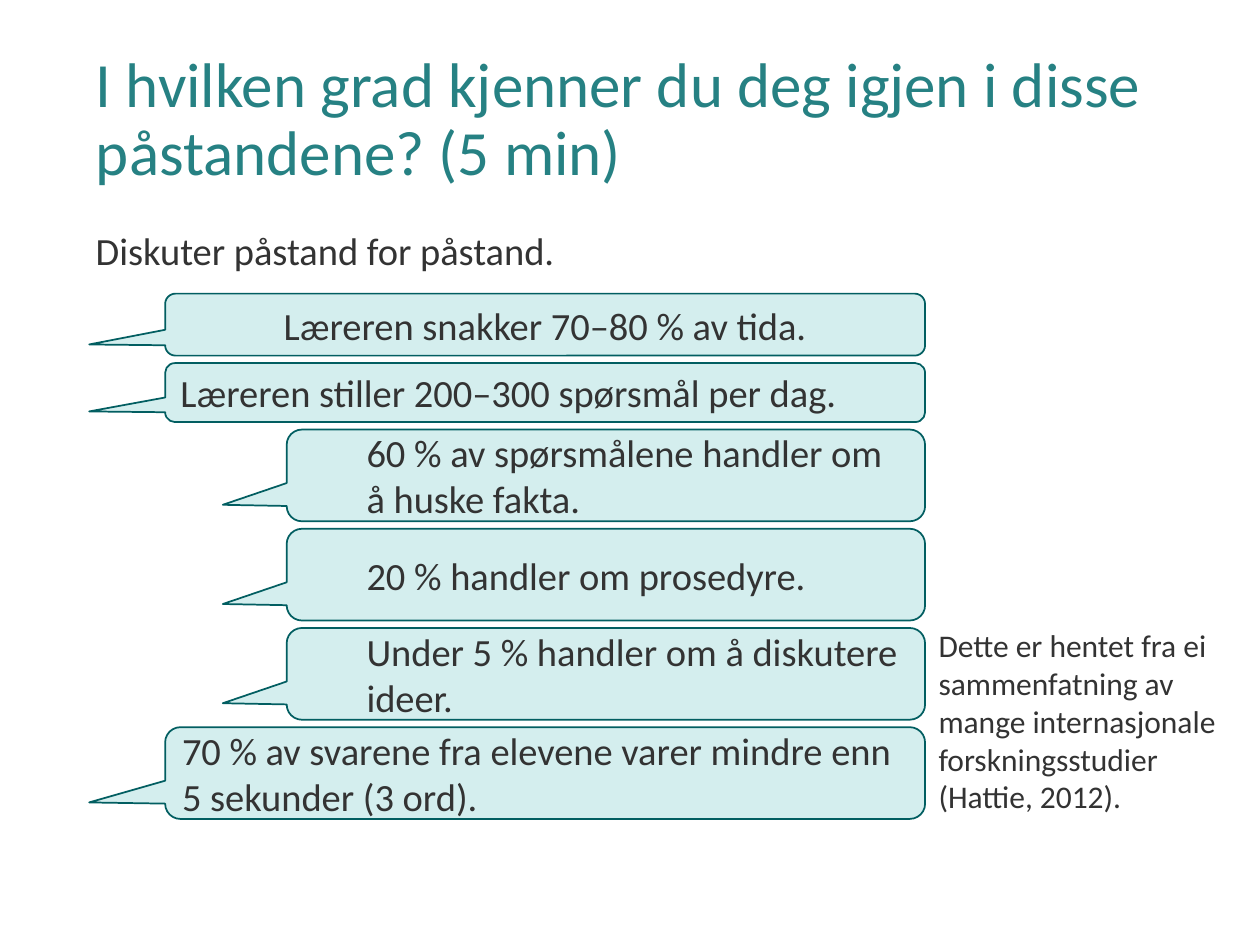
from dataclasses import dataclass

from pptx import Presentation
from pptx.dml.color import RGBColor
from pptx.enum.shapes import MSO_SHAPE as Shape
from pptx.enum.text import MSO_ANCHOR as Anchor, MSO_AUTO_SIZE as AutoSize, PP_ALIGN as Align
from pptx.util import Cm, Pt

COLORS = {"title": "268183", "text": "333333", "fill": "D4EEEE", "line": "025E61"}
FONT = "Calibri"
WIDE_LEFT, NARROW_LEFT, RIGHT = 3.33, 5.78, 18.65
FIRST_TOP, GAP = 5.92, 0.15


@dataclass
class Claim:
    text: str
    height: float = 1.85
    level: int = 0
    align: Align = Align.LEFT


CLAIMS = [
    Claim("Læreren snakker 70–80 % av tida.", 1.25, align=Align.CENTER),
    Claim("Læreren stiller 200–300 spørsmål per dag.", 1.19),
    Claim("60 % av spørsmålene handler om å huske fakta.", level=1),
    Claim("20 % handler om prosedyre.", level=1),
    Claim("Under 5 % handler om å diskutere ideer.", level=1),
    Claim("70 % av svarene fra elevene varer mindre enn 5 sekunder (3 ord)."),
]


def color(name: str) -> RGBColor:
    return RGBColor.from_string(COLORS[name])


def write(box, text: str, size: float, tone: str = "text", align: Align = Align.LEFT):
    para = box.text_frame.paragraphs[0]
    para.alignment = align
    span = para.add_run()
    span.text = text
    span.font.name = FONT
    span.font.size = Pt(size)
    span.font.color.rgb = color(tone)
    return para


def add_claim(page, claim: Claim, top: float) -> None:
    left = NARROW_LEFT if claim.level else WIDE_LEFT
    box = page.shapes.add_shape(Shape.ROUNDED_RECTANGULAR_CALLOUT, Cm(left), Cm(top),
                                Cm(RIGHT - left), Cm(claim.height))
    box.shadow.inherit = False
    box.adjustments[0], box.adjustments[1] = -0.6, 0.32
    box.fill.solid()
    box.fill.fore_color.rgb = color("fill")
    box.line.color.rgb = color("line")
    box.line.width = Pt(1)
    box.text_frame.word_wrap = True
    box.text_frame.vertical_anchor = Anchor.MIDDLE
    write(box, claim.text, 22, align=claim.align).level = claim.level


def add_note(page, text: str, size: float, left: float, top: float,
             width: float, height: float, wrap: bool) -> None:
    box = page.shapes.add_textbox(Cm(left), Cm(top), Cm(width), Cm(height))
    box.text_frame.word_wrap = wrap
    box.text_frame.auto_size = AutoSize.SHAPE_TO_FIT_TEXT
    write(box, text, size)


def main() -> None:
    deck = Presentation()
    deck.slide_width, deck.slide_height = Cm(25.4), Cm(19.05)
    page = deck.slides.add_slide(deck.slide_layouts[5])

    # Title
    title = page.shapes.title
    title.left, title.top, title.width, title.height = Cm(1.68), Cm(0.61), Cm(24.08), Cm(3.68)
    title.text_frame.auto_size = AutoSize.NONE
    title.text_frame.vertical_anchor = Anchor.MIDDLE
    heading = write(title, "I hvilken grad kjenner du deg igjen i disse påstandene? (5 min)",
                    36, "title")
    heading.line_spacing = 0.9

    # Claims stacked with equal gaps
    top = FIRST_TOP
    for claim in CLAIMS:
        add_claim(page, claim, top)
        top += claim.height + GAP

    # Source note and instruction
    add_note(page, "Dette er hentet fra ei sammenfatning av mange internasjonale "
             "forskningsstudier (Hattie, 2012).", 18, 18.67, 12.5, 6.25, 4.11, True)
    add_note(page, "Diskuter påstand for påstand.", 22, 1.68, 4.45, 10.03, 1.19, False)

    deck.save("out.pptx")


if __name__ == "__main__":
    main()
